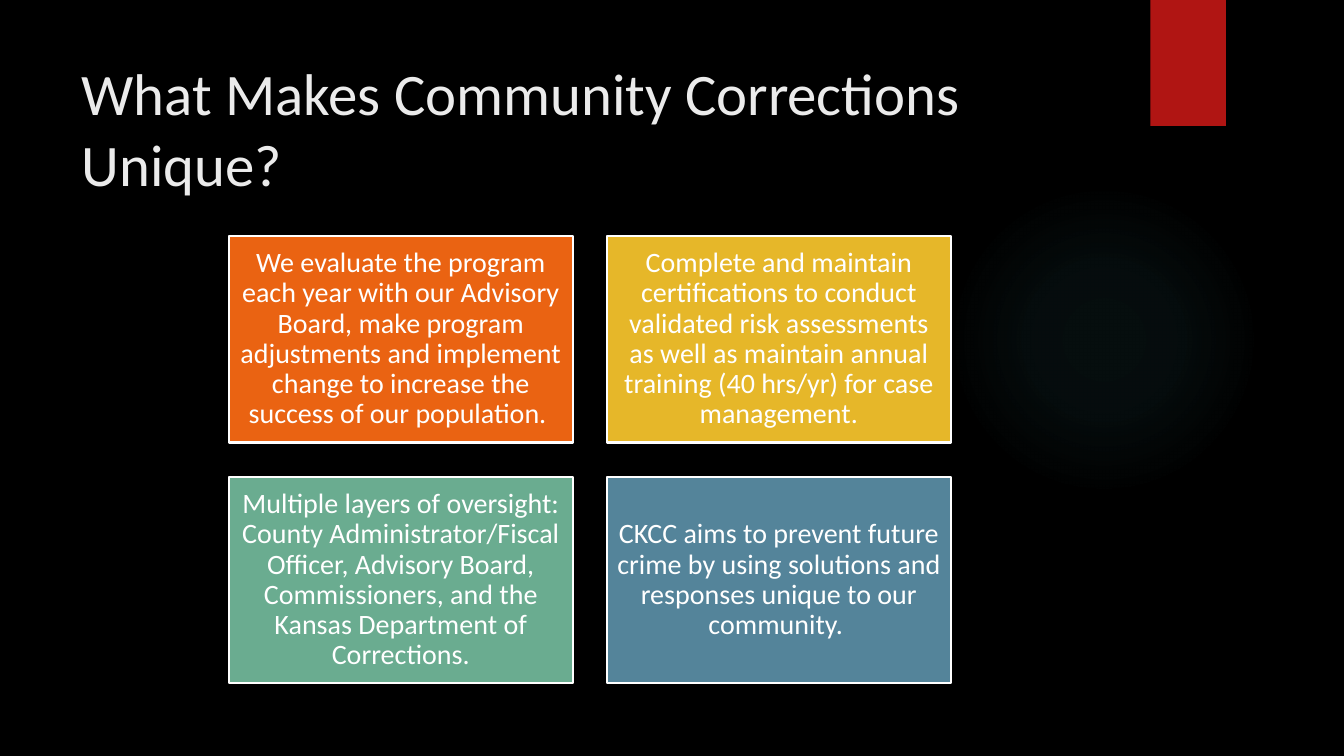
from pptx import Presentation
from pptx import util as u
from pptx.dml.color import RGBColor
from pptx.enum import shapes, text
from pptx.oxml import parse_xml
from pptx.oxml.ns import nsdecls

PX = 9144  # 100 px to the inch


def px(length):
    return u.Emu(length * PX)


def colour(value):
    return RGBColor.from_string(value)


class Slide:
    font = "Calibri"
    white = "FFFFFF"

    def __init__(self, deck, background):
        self.page = deck.slides.add_slide(deck.slide_layouts[5])
        fill = self.page.background.fill
        fill.solid()
        fill.fore_color.rgb = colour(background)

    def set_words(self, box, words, size, ink, align):
        frame = box.text_frame
        frame.text = words
        frame.word_wrap = True
        frame.auto_size = text.MSO_AUTO_SIZE.NONE
        frame.vertical_anchor = text.MSO_ANCHOR.MIDDLE
        para = frame.paragraphs[0]
        para.alignment = align
        for span in para.runs:
            span.font.name = self.font
            span.font.size = u.Pt(size)
            span.font.color.rgb = colour(ink)
        return para

    def title(self, words, left, top, width, height):
        box = self.page.shapes.title
        box.left, box.top, box.width, box.height = map(px, (left, top, width, height))
        para = self.set_words(box, words, 42, "EBEBEB", text.PP_ALIGN.LEFT)
        para.line_spacing = 1.0

    def shape(self, kind, left, top, width, height):
        box = self.page.shapes.add_shape(kind, *map(px, (left, top, width, height)))
        box.shadow.inherit = False
        box.line.fill.background()
        return box

    def block(self, fill, *place):
        box = self.shape(shapes.MSO_SHAPE.RECTANGLE, *place)
        box.fill.solid()
        box.fill.fore_color.rgb = colour(fill)
        return box

    def card(self, words, fill, *place):
        box = self.block(fill, *place)
        box.line.color.rgb = colour(self.white)
        box.line.width = u.Pt(1.5)
        frame = box.text_frame
        frame.margin_left = frame.margin_right = px(8)
        frame.margin_top = frame.margin_bottom = px(8)
        para = self.set_words(box, words, 20, self.white, text.PP_ALIGN.CENTER)
        para.line_spacing = 0.9

    def glow(self, tint, stops, *place):
        box = self.shape(shapes.MSO_SHAPE.OVAL, *place)
        box.fill.background()
        steps = "".join(
            f'<a:gs pos="{spot * 1000}"><a:srgbClr val="{tint}">'
            f'<a:alpha val="{alpha * 1000}"/></a:srgbClr></a:gs>'
            for spot, alpha in stops
        )
        gradient = parse_xml(
            f'<a:gradFill {nsdecls("a")}><a:gsLst>{steps}</a:gsLst><a:path path="circle">'
            '<a:fillToRect l="50000" t="50000" r="50000" b="50000"/></a:path></a:gradFill>'
        )
        properties = box._element.spPr
        properties.replace(properties.find("{*}noFill"), gradient)


CARDS = [
    ("We evaluate the program each year with our Advisory Board, make program "
     "adjustments and implement change to increase the success of our population. ",
     "EA6312"),
    ("Complete and maintain certifications to conduct validated risk assessments "
     "as well as maintain annual training (40 hrs/yr) for case management.",
     "E6B729"),
    ("Multiple layers of oversight: County Administrator/Fiscal Officer, Advisory "
     "Board, Commissioners, and the Kansas Department of Corrections.",
     "6AAC90"),
    ("CKCC aims to prevent future crime by using solutions and responses unique "
     "to our community. ",
     "54849A"),
]


def main():
    deck = Presentation()
    deck.slide_width, deck.slide_height = px(1333), px(750)
    slide = Slide(deck, "000000")

    # Backdrop
    slide.glow("50B9C1", [(0, 7), (36, 6), (69, 0)], 941, 183, 308, 308)
    slide.block("B01513", 1141, 0, 75, 125)

    # Title
    slide.title("What Makes Community Corrections Unique?", 71, 50, 1029, 153)

    # Two-by-two grid of cards
    width, height, gap = 341, 205, 34
    for index, (words, fill) in enumerate(CARDS):
        row, column = divmod(index, 2)
        left = 227 + column * (width + gap)
        top = 234 + row * (height + gap)
        slide.card(words, fill, left, top, width, height)

    deck.save("out.pptx")


if __name__ == "__main__":
    main()
